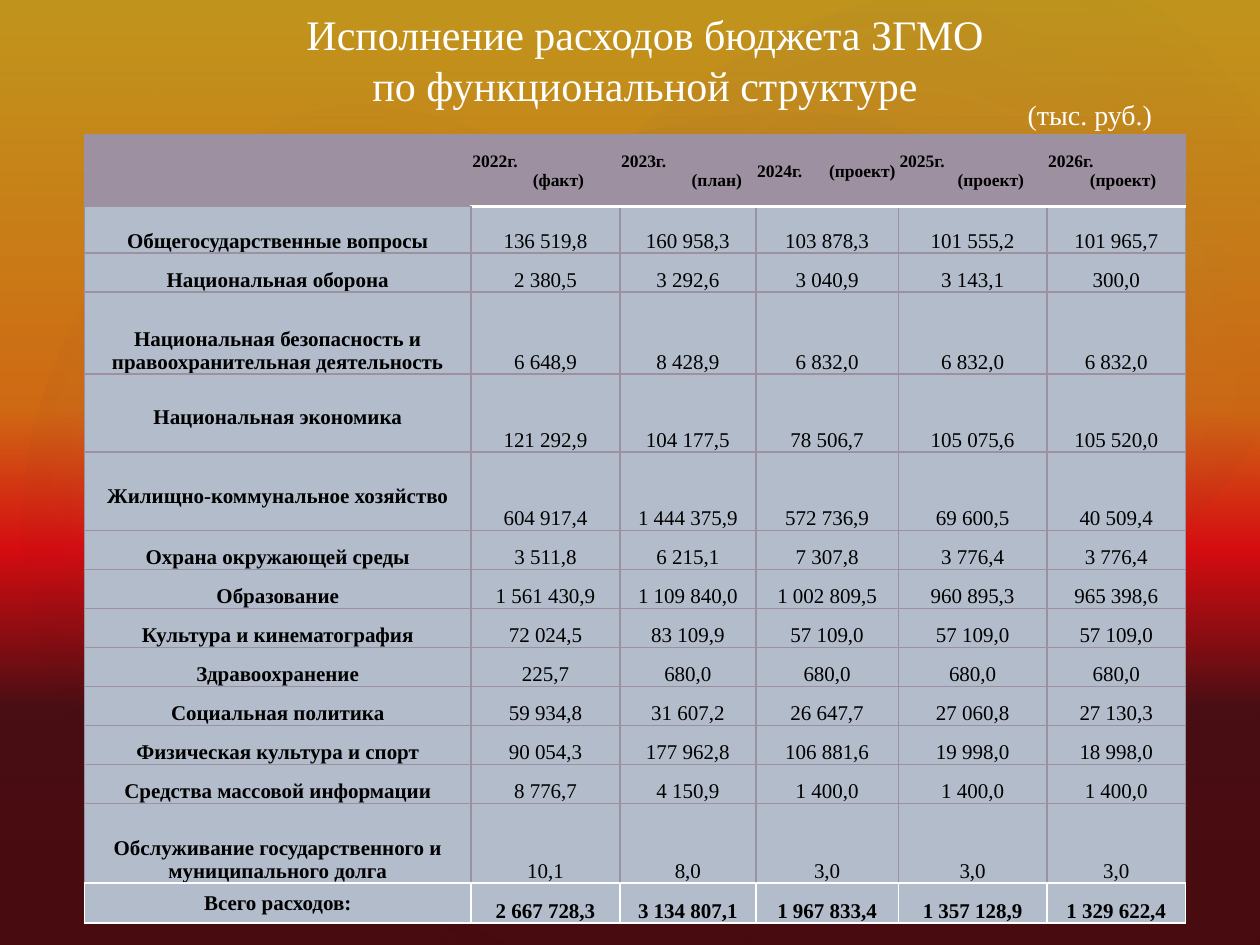
from lxml import etree
from pptx import Presentation
from pptx.dml.color import RGBColor
from pptx.enum.shapes import MSO_SHAPE
from pptx.enum.text import MSO_ANCHOR, PP_ALIGN
from pptx.oxml.ns import qn
from pptx.util import Inches, Pt

RECTANGLE, OVAL = MSO_SHAPE.RECTANGLE, MSO_SHAPE.OVAL
LEFT, CENTER = PP_ALIGN.LEFT, PP_ALIGN.CENTER
MIDDLE, BOTTOM = MSO_ANCHOR.MIDDLE, MSO_ANCHOR.BOTTOM

FONT = "Times New Roman"
WHITE, BLACK, MAUVE, PALE = "FFFFFF", "000000", "9D90A0", "B2BCCB"

BACKGROUND = [(0, "FFC000", 100), (43, "FF7A00", 100),
              (58, "FF0300", 100), (75, "4D0808", 100)]
VEIL = [(0, "504652", 36), (100, "242852", 10)]
# left, top, width, height, rotation, opacity at the centre
GLOWS = [(1.5, 1.14, 7.92, 6.24, 328.7, 7),
         (-0.3, 1.28, 6.06, 4.9, 294.3, 8),
         (3.58, 0.13, 7.09, 5.2, 328.7, 8)]

COLUMN_WIDTHS = [3.07, 1.18, 1.08, 1.13, 1.18, 1.1]
HEADER_HEIGHT = 0.57
# year, stage, indent of the stage, whether both share one line
HEADERS = [("2022г.", "(факт)", 0.48, False),
           ("2023г.", "(план)", 0.56, False),
           ("2024г.", "(проект)", 0.57, True),
           ("2025г.", "(проект)", 0.46, False),
           ("2026г.", "(проект)", 0.33, False)]
LINE_HEIGHT = 0.18
RAISED_LABELS = ("Национальная экономика", "Жилищно-коммунальное хозяйство")
# row height, label, values
EXPENSES = [
    (0.37, "Общегосударственные вопросы",
     ["136 519,8", "160 958,3", "103 878,3", "101 555,2", "101 965,7"]),
    (0.31, "Национальная оборона",
     ["2 380,5", "3 292,6", "3 040,9", "3 143,1", "300,0"]),
    (0.65, "Национальная безопасность и правоохранительная деятельность",
     ["6 648,9", "8 428,9", "6 832,0", "6 832,0", "6 832,0"]),
    (0.62, "Национальная экономика",
     ["121 292,9", "104 177,5", "78 506,7", "105 075,6", "105 520,0"]),
    (0.62, "Жилищно-коммунальное хозяйство",
     ["604 917,4", "1 444 375,9", "572 736,9", "69 600,5", "40 509,4"]),
    (0.31, "Охрана окружающей среды",
     ["3 511,8", "6 215,1", "7 307,8", "3 776,4", "3 776,4"]),
    (0.31, "Образование",
     ["1 561 430,9", "1 109 840,0", "1 002 809,5", "960 895,3", "965 398,6"]),
    (0.31, "Культура и кинематография",
     ["72 024,5", "83 109,9", "57 109,0", "57 109,0", "57 109,0"]),
    (0.31, "Здравоохранение",
     ["225,7", "680,0", "680,0", "680,0", "680,0"]),
    (0.31, "Социальная политика",
     ["59 934,8", "31 607,2", "26 647,7", "27 060,8", "27 130,3"]),
    (0.31, "Физическая культура и спорт",
     ["90 054,3", "177 962,8", "106 881,6", "19 998,0", "18 998,0"]),
    (0.31, "Средства массовой информации",
     ["8 776,7", "4 150,9", "1 400,0", "1 400,0", "1 400,0"]),
    (0.63, "Обслуживание государственного и муниципального долга",
     ["10,1", "8,0", "3,0", "3,0", "3,0"]),
    (0.32, "Всего расходов:",
     ["2 667 728,3", "3 134 807,1", "1 967 833,4", "1 357 128,9", "1 329 622,4"]),
]


def rgb(color):
    return RGBColor.from_string(color)


def add_color(parent, color, opacity=100):
    node = etree.SubElement(parent, qn("a:srgbClr"), val=color)
    if opacity < 100:
        etree.SubElement(node, qn("a:alpha"), val=str(opacity * 1000))


def paint_gradient(owner, stops, radial=False):
    """Fill a shape or background with (position, colour, opacity) stops."""
    owner.fill.gradient()


def set_gradient(fill, element, stops, radial=False):
    """Fill with (position, colour, opacity) stops, downwards or from the centre."""
    fill.gradient()
    gradient = element.xpath(".//a:gradFill")[0]
    for child in list(gradient):
        gradient.remove(child)
    stop_list = etree.SubElement(gradient, qn("a:gsLst"))
    for position, color, opacity in stops:
        stop = etree.SubElement(stop_list, qn("a:gs"), pos=str(position * 1000))
        add_color(stop, color, opacity)
    if radial:
        circle = etree.SubElement(gradient, qn("a:path"), path="circle")
        etree.SubElement(circle, qn("a:fillToRect"),
                         {side: "50000" for side in "ltrb"})
    else:
        etree.SubElement(gradient, qn("a:lin"), ang="5400000", scaled="0")


def add_gradient_shape(slide, kind, bounds, stops, rotation=0, radial=False):
    shape = slide.shapes.add_shape(kind, *map(Inches, bounds))
    shape.rotation = rotation
    shape.shadow.inherit = False
    shape.line.fill.background()
    set_gradient(shape.fill, shape.element, stops, radial)


def write(para, text, size=12, color=BLACK, bold=False, align=CENTER):
    para.alignment = align
    for number, line in enumerate(text.split("\n")):
        if number:
            para.add_line_break()
        span = para.add_run()
        span.text = line
        span.font.name = FONT
        span.font.size = Pt(size)
        span.font.bold = bold
        span.font.color.rgb = rgb(color)


def add_text(slide, bounds, text, anchor, **style):
    box = slide.shapes.add_textbox(*map(Inches, bounds))
    box.text_frame.word_wrap = True
    box.text_frame.vertical_anchor = anchor
    write(box.text_frame.paragraphs[0], text, color=WHITE, **style)


def style_cell(cell, fill, anchor, borders, bottom_margin=0):
    """Apply fill, anchor, margins and (colour, width) borders keyed L, R, T, B."""
    properties = cell._tc.get_or_add_tcPr()
    for side in "LRTB":
        color, width = borders[side]
        line = etree.SubElement(properties, qn("a:ln" + side), w=str(Pt(width)))
        add_color(etree.SubElement(line, qn("a:solidFill")), color)
    cell.fill.solid()
    cell.fill.fore_color.rgb = rgb(fill)
    cell.vertical_anchor = anchor
    cell.margin_left = cell.margin_right = cell.margin_top = Inches(0.01)
    cell.margin_bottom = Inches(bottom_margin)


def write_header(cell, year, stage, indent, one_line):
    para = cell.text_frame.paragraphs[0]
    style = {"size": 10, "bold": True, "align": LEFT}
    offset = str(Inches(indent))
    if one_line:
        write(para, f"{year}\t{stage}", **style)
        tabs = etree.SubElement(para._p.get_or_add_pPr(), qn("a:tabLst"))
        etree.SubElement(tabs, qn("a:tab"), pos=offset, algn="l")
    else:
        write(para, year, **style)
        second = cell.text_frame.add_paragraph()
        write(second, stage, **style)
        second._p.get_or_add_pPr().set("marL", offset)


def add_budget_table(slide):
    heights = [HEADER_HEIGHT] + [height for height, _, _ in EXPENSES]
    bounds = (0.67, 1.07, sum(COLUMN_WIDTHS), sum(heights))
    table = slide.shapes.add_table(len(heights), len(COLUMN_WIDTHS),
                                   *map(Inches, bounds)).table
    table.first_row = table.horz_banding = False
    for column, width in zip(table.columns, COLUMN_WIDTHS):
        column.width = Inches(width)
    for row, height in zip(table.rows, heights):
        row.height = Inches(height)

    grid = dict.fromkeys("LRTB", (MAUVE, 1))
    for index in range(len(COLUMN_WIDTHS)):
        rule = (WHITE, 1.5) if index else (MAUVE, 1)
        style_cell(table.cell(0, index), MAUVE, MIDDLE, {**grid, "B": rule})
    for index, header in enumerate(HEADERS, 1):
        write_header(table.cell(0, index), *header)

    total = len(EXPENSES)
    for row, (_, label, values) in enumerate(EXPENSES, 1):
        for index, text in enumerate([label] + values):
            borders = dict(grid)
            if row == total:
                borders = dict.fromkeys("LRTB", (WHITE, 1))
            elif row == total - 1:
                borders["B"] = (WHITE, 1)
            elif row == 1 and index:
                borders["T"] = (WHITE, 1.5)
            if index == 0 and row < total:
                borders["R"] = (MAUVE, 1.5)
            cell = table.cell(row, index)
            anchor = MIDDLE if row == total and index == 0 else BOTTOM
            margin = LINE_HEIGHT if text in RAISED_LABELS else 0
            style_cell(cell, PALE, anchor, borders, margin)
            write(cell.text_frame.paragraphs[0], text,
                  bold=index == 0 or row == total)


def main():
    deck = Presentation()
    deck.slide_width, deck.slide_height = Inches(10), Inches(7.5)
    slide = deck.slides.add_slide(deck.slide_layouts[6])
    set_gradient(slide.background.fill, slide.element, BACKGROUND)
    add_gradient_shape(slide, RECTANGLE, (0, 0, 10, 7.5), VEIL)
    for *bounds, rotation, opacity in GLOWS:
        stops = [(0, "C4BCC6", opacity), (58, "242852", 0)]
        add_gradient_shape(slide, OVAL, bounds, stops, rotation, radial=True)
    add_text(slide, (0.12, 0, 10, 0.92),
             "Исполнение расходов бюджета ЗГМО\nпо функциональной структуре",
             BOTTOM, size=24)
    add_budget_table(slide)
    add_text(slide, (7.75, 0.75, 1.8, 0.31), "(тыс. руб.)", MIDDLE, size=16)
    deck.save("out.pptx")


if __name__ == "__main__":
    main()
